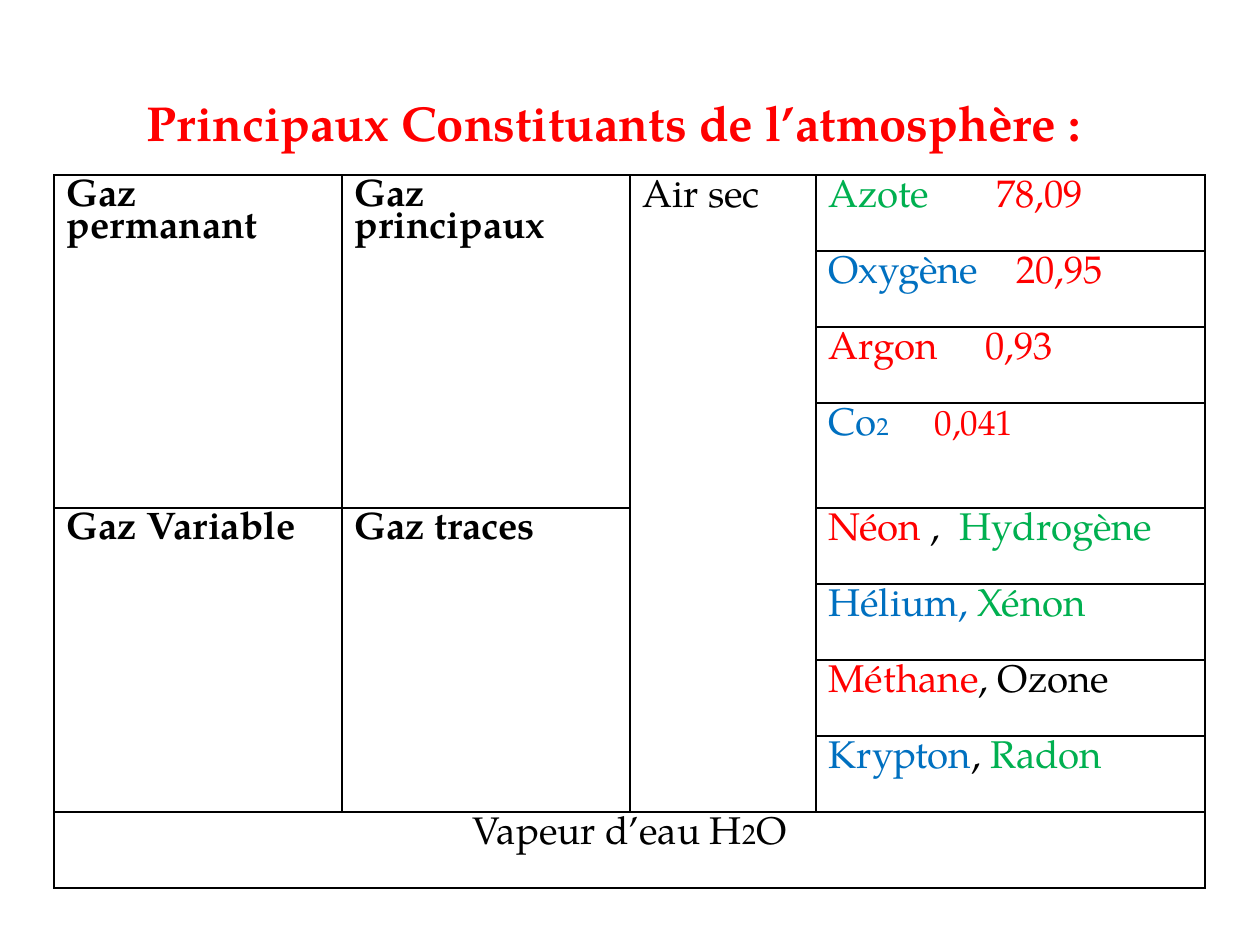
from lxml import etree
from pptx import Presentation
from pptx.dml.color import RGBColor
from pptx.enum.text import MSO_ANCHOR, PP_ALIGN
from pptx.oxml.ns import qn
from pptx.util import Emu, Pt

PX = 914400 // 126
FONT = "TeX Gyre Pagella"
TOP = MSO_ANCHOR.TOP
LEFT, CENTER = PP_ALIGN.LEFT, PP_ALIGN.CENTER
BLACK, RED, GREEN, BLUE = "000000", "FF0000", "00B050", "0070C0"
BODY_SIZE = 22

COLUMN_WIDTHS = [288, 288, 186, 389]
ROW_HEIGHTS = [76, 76, 76, 105, 76, 76, 76, 76, 76]

# Row, column, last row, last column, text
GROUPS = [
    (0, 0, 3, 0, "Gaz permanant"),
    (0, 1, 3, 1, "Gaz principaux"),
    (4, 0, 7, 0, "Gaz Variable"),
    (4, 1, 7, 1, "Gaz traces"),
]

# Spans (text, colour, optional size) and the tab stop of the percentage
GASES = [
    ([("Azote\t", GREEN), ("78,09", RED)], 168),
    ([("Oxygène\t", BLUE), ("20,95", RED)], 188),
    ([("Argon\t0,93", RED)], 157),
    ([("Co", BLUE), ("2\t", BLUE, 14), ("0,041", RED, 20)], 106),
    ([("Néon", RED), (" ,  ", BLACK), ("Hydrogène", GREEN)], None),
    ([("Hélium, ", BLUE), ("Xénon", GREEN)], None),
    ([("Méthane", RED), (", Ozone", BLACK)], None),
    ([("Krypton", BLUE), (", ", BLACK), ("Radon", GREEN)], None),
]
WATER = [("Vapeur d’eau H", BLACK), ("2", BLACK, 16), ("O", BLACK)]


def px(value):
    return Emu(value * PX)


def color(hex_value):
    return RGBColor.from_string(hex_value)


def write_spans(para, spans, bold=False, align=LEFT):
    para.alignment = align
    for text, hex_value, *size in spans:
        span = para.add_run()
        span.text = text
        font = span.font
        font.name = FONT
        font.size = Pt(size[0] if size else BODY_SIZE)
        font.bold = bold
        font.color.rgb = color(hex_value)


def add_tab_stop(para, position):
    properties = para._p.get_or_add_pPr()
    stops = etree.SubElement(properties, qn("a:tabLst"))
    etree.SubElement(stops, qn("a:tab"), pos=str(px(position)), algn="l")


def style_cell(cell):
    """Give the cell thin black borders and no fill."""
    properties = cell._tc.get_or_add_tcPr()
    for side in ("a:lnL", "a:lnR", "a:lnT", "a:lnB"):
        line = etree.SubElement(properties, qn(side), w=str(Pt(1)))
        fill = etree.SubElement(line, qn("a:solidFill"))
        etree.SubElement(fill, qn("a:srgbClr"), val=BLACK)
    cell.fill.background()


def write_cell(cell, spans, bold=False, align=LEFT, tab=None):
    para = cell.text_frame.paragraphs[0]
    para.line_spacing = 0.85
    write_spans(para, spans, bold, align)
    if tab:
        add_tab_stop(para, tab)


def add_title(page):
    title = page.shapes.title
    title.left, title.top = px(134), px(86)
    title.width, title.height = px(983), px(72)
    frame = title.text_frame
    frame.word_wrap = True
    frame.vertical_anchor = TOP
    spans = [("Principaux Constituants de l’atmosphère :", RED, 28)]
    write_spans(frame.paragraphs[0], spans, bold=True)


def add_gas_table(page):
    frame = page.shapes.add_table(
        len(ROW_HEIGHTS), len(COLUMN_WIDTHS), px(54), px(175),
        px(sum(COLUMN_WIDTHS)), px(sum(ROW_HEIGHTS)))
    table = frame.table
    table.first_row = table.horz_banding = False
    for column, width in zip(table.columns, COLUMN_WIDTHS):
        column.width = px(width)
    for row, height in zip(table.rows, ROW_HEIGHTS):
        row.height = px(height)
    for cell in table.iter_cells():
        style_cell(cell)

    for top, left, bottom, right, text in GROUPS:
        cell = table.cell(top, left)
        cell.merge(table.cell(bottom, right))
        write_cell(cell, [(text, BLACK)], bold=True)

    dry_air = table.cell(0, 2)
    dry_air.merge(table.cell(7, 2))
    write_cell(dry_air, [("Air sec", BLACK)])

    for row, (spans, tab) in enumerate(GASES):
        write_cell(table.cell(row, 3), spans, tab=tab)

    water = table.cell(8, 0)
    water.merge(table.cell(8, 3))
    write_cell(water, WATER, align=CENTER)


def main():
    deck = Presentation()
    deck.slide_width, deck.slide_height = px(1260), px(945)
    page = deck.slides.add_slide(deck.slide_layouts[5])
    add_title(page)
    add_gas_table(page)
    deck.save("out.pptx")


if __name__ == "__main__":
    main()
